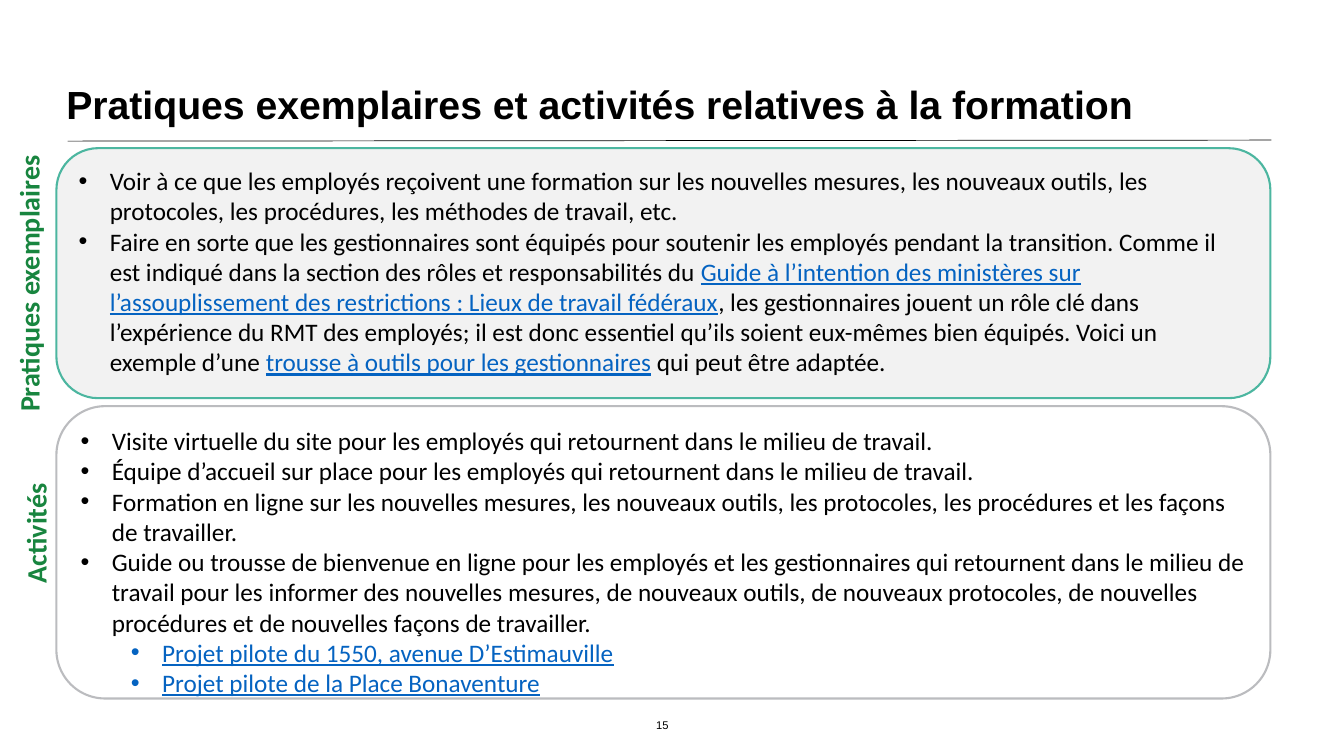
from lxml import etree
from pptx import Presentation
from pptx.dml.color import RGBColor
from pptx.enum.shapes import MSO_CONNECTOR, MSO_SHAPE
from pptx.enum.text import MSO_ANCHOR, PP_ALIGN
from pptx.oxml.ns import qn
from pptx.util import Inches, Pt

STRAIGHT = MSO_CONNECTOR.STRAIGHT
ROUNDED = MSO_SHAPE.ROUNDED_RECTANGLE
TOP, MIDDLE = MSO_ANCHOR.TOP, MSO_ANCHOR.MIDDLE
LEFT, CENTER = PP_ALIGN.LEFT, PP_ALIGN.CENTER

BLACK = RGBColor(0x00, 0x00, 0x00)
GREEN = RGBColor(0x18, 0x85, 0x3F)
TEAL = RGBColor(0x4C, 0xB6, 0xA0)
SILVER = RGBColor(0xBB, 0xBC, 0xBF)
PALE = RGBColor(0xF2, 0xF2, 0xF2)
LINK_BLUE = RGBColor(0x05, 0x63, 0xC1)

PANEL_LEFT, PANEL_WIDTH = 0.56, 12.04
LEVEL_INDENTS = (0.31, 0.81)
HANGING = 0.31

# Each bullet is (level, [(text, is_link), ...]).
PRACTICES = [
    (0, [("Voir à ce que les employés reçoivent une formation sur les nouvelles mesures, "
          "les nouveaux outils, les protocoles, les procédures, les méthodes de travail, etc.", False)]),
    (0, [("Faire en sorte que les gestionnaires sont équipés pour soutenir les employés "
          "pendant la transition. Comme il est indiqué dans la section des rôles et "
          "responsabilités du ", False),
         ("Guide à l’intention des ministères sur l’assouplissement des restrictions : "
          "Lieux de travail fédéraux", True),
         (", les gestionnaires jouent un rôle clé dans l’expérience du RMT des employés; "
          "il est donc essentiel qu’ils soient eux-mêmes bien équipés. Voici un exemple d’une ", False),
         ("trousse à outils pour les gestionnaires", True),
         (" qui peut être adaptée.", False)]),
]
ACTIVITIES = [
    (0, [("Visite virtuelle du site pour les employés qui retournent dans le milieu de travail.", False)]),
    (0, [("Équipe d’accueil sur place pour les employés qui retournent dans le milieu de travail.", False)]),
    (0, [("Formation en ligne sur les nouvelles mesures, les nouveaux outils, les protocoles, "
          "les procédures et les façons de travailler.", False)]),
    (0, [("Guide ou trousse de bienvenue en ligne pour les employés et les gestionnaires qui "
          "retournent dans le milieu de travail pour les informer des nouvelles mesures, de "
          "nouveaux outils, de nouveaux protocoles, de nouvelles procédures et de nouvelles "
          "façons de travailler.", False)]),
    (1, [("Projet pilote du 1550, avenue D’Estimauville", True)]),
    (1, [("Projet pilote de la Place Bonaventure", True)]),
]


class SlideBuilder:
    heading_font = "Arial"
    body_font = "Calibri"
    body_size = 18

    def __init__(self, slide):
        self.slide = slide

    def style(self, font, name, size, color, bold=False):
        font.name = name
        font.size = Pt(size)
        font.color.rgb = color
        font.bold = bold

    def rule(self, x1, y1, x2, y2):
        line = self.slide.shapes.add_connector(
            STRAIGHT, Inches(x1), Inches(y1), Inches(x2), Inches(y2))
        line.line.color.rgb = BLACK
        line.line.width = Pt(0.5)
        etree.SubElement(line._element.spPr, qn("a:effectLst"))

    def text(self, text, left, top, width, height, name, size, color,
             bold=False, align=LEFT, anchor=TOP, rotation=0, wrap=True):
        box = self.slide.shapes.add_textbox(
            Inches(left), Inches(top), Inches(width), Inches(height))
        box.rotation = rotation
        frame = box.text_frame
        frame.text = text
        frame.word_wrap = wrap
        frame.vertical_anchor = anchor
        paragraph = frame.paragraphs[0]
        paragraph.alignment = align
        self.style(paragraph.runs[0].font, name, size, color, bold)
        return paragraph

    def side_label(self, text, left, top, width, wrap):
        self.text(text, left, top, width, 0.44, self.body_font, 20, GREEN,
                  bold=True, rotation=270, wrap=wrap)

    def panel(self, top, height, outline, bullets, fill=None):
        shape = self.slide.shapes.add_shape(
            ROUNDED, Inches(PANEL_LEFT), Inches(top), Inches(PANEL_WIDTH), Inches(height))
        shape.shadow.inherit = False
        if fill is None:
            shape.fill.background()
        else:
            shape.fill.solid()
            shape.fill.fore_color.rgb = fill
        shape.line.color.rgb = outline
        shape.line.width = Pt(1.5)
        frame = shape.text_frame
        frame.word_wrap = True
        frame.vertical_anchor = TOP
        for index, (level, pieces) in enumerate(bullets):
            paragraph = frame.add_paragraph() if index else frame.paragraphs[0]
            self.bullet(paragraph, level, pieces)

    def bullet(self, paragraph, level, pieces):
        paragraph.level = level
        paragraph.alignment = LEFT
        properties = paragraph._p.get_or_add_pPr()
        properties.set("marL", str(Inches(LEVEL_INDENTS[level])))
        properties.set("indent", str(-Inches(HANGING)))
        etree.SubElement(properties, qn("a:buFont"), typeface="Arial")
        etree.SubElement(properties, qn("a:buChar"), char="•")
        for text, is_link in pieces:
            run = paragraph.add_run()
            run.text = text
            self.style(run.font, self.body_font, self.body_size,
                       LINK_BLUE if is_link else BLACK)
            run.font.underline = is_link


def main():
    presentation = Presentation()
    presentation.slide_width = Inches(13.33)
    presentation.slide_height = Inches(7.5)
    builder = SlideBuilder(presentation.slides.add_slide(presentation.slide_layouts[6]))

    builder.rule(0.67, 1.4, 12.61, 1.39)
    builder.text("15", 6.37, 7.06, 0.4, 0.27, builder.heading_font, 8, BLACK,
                 align=CENTER, anchor=MIDDLE)
    title = builder.text("Pratiques exemplaires et activités relatives à la formation",
                         PANEL_LEFT, 0.6, PANEL_WIDTH, 0.91, builder.heading_font, 28, BLACK,
                         bold=True, anchor=MIDDLE)
    title.line_spacing = 0.9

    builder.panel(1.47, 2.48, TEAL, PRACTICES, fill=PALE)
    builder.panel(4.03, 2.9, SILVER, ACTIVITIES)
    builder.side_label("Pratiques exemplaires", -1.19, 2.49, 2.95, wrap=True)
    builder.side_label("Activités", -0.28, 5.03, 1.27, wrap=False)

    presentation.save("out.pptx")


if __name__ == "__main__":
    main()
